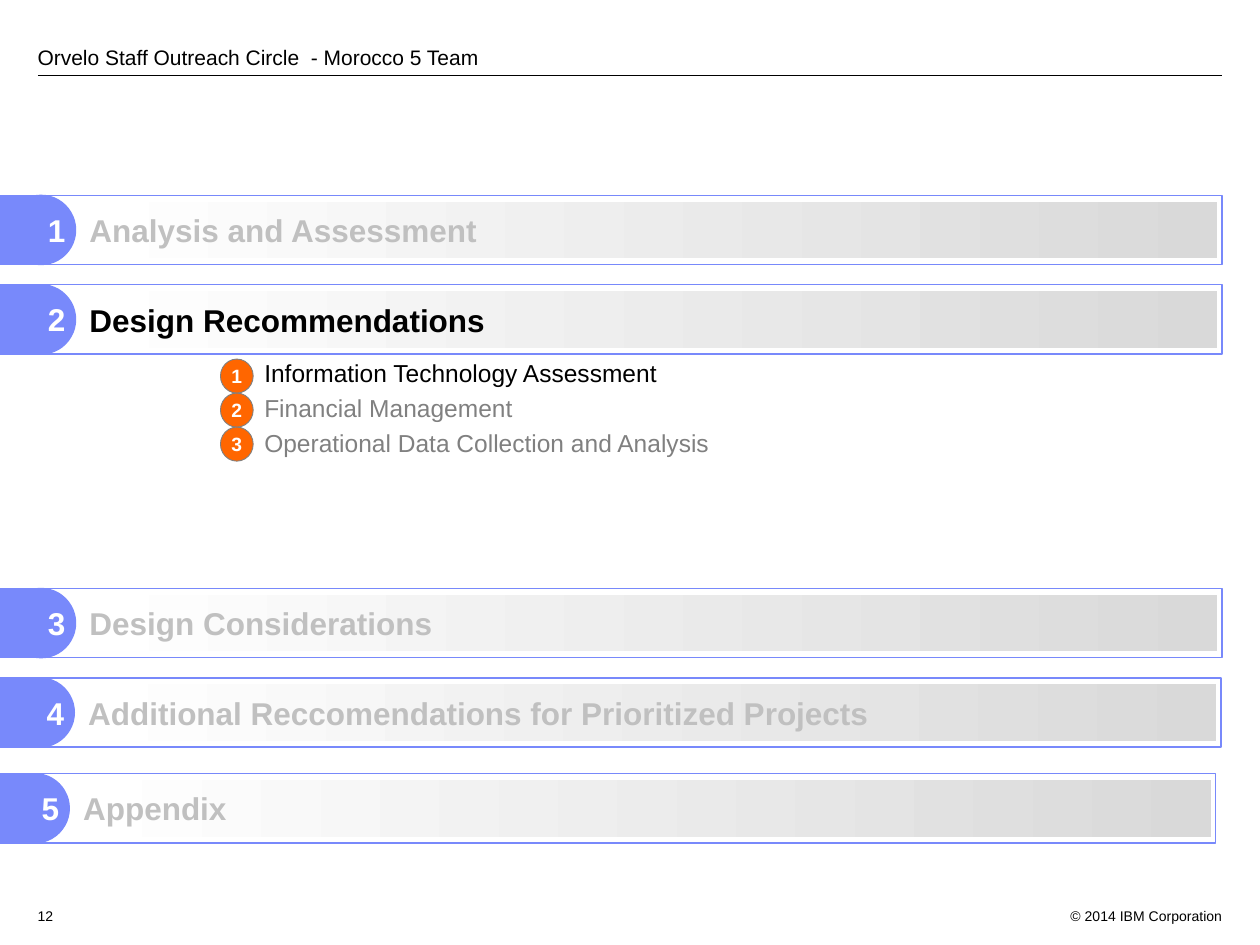
"""Build the agenda slide with its second section open."""
from lxml import etree
from pptx import Presentation
from pptx.dml.color import RGBColor
from pptx.enum.shapes import MSO_CONNECTOR, MSO_SHAPE
from pptx.enum.text import MSO_ANCHOR, PP_ALIGN
from pptx.oxml.ns import qn
from pptx.util import Pt

OVAL, RECTANGLE = MSO_SHAPE.OVAL, MSO_SHAPE.RECTANGLE
STRAIGHT = MSO_CONNECTOR.STRAIGHT
LEFT, CENTER, RIGHT = PP_ALIGN.LEFT, PP_ALIGN.CENTER, PP_ALIGN.RIGHT
TOP, MIDDLE, BOTTOM = MSO_ANCHOR.TOP, MSO_ANCHOR.MIDDLE, MSO_ANCHOR.BOTTOM

FONT = "Arial"
COLORS = {
    "black": "000000", "white": "FFFFFF", "blue": "7889FB", "orange": "FF6600",
    "gray": "808080", "faded": "C0C0C0", "bar_end": "D9D9D9",
}

HEADER = "Orvelo Staff Outreach Circle  - Morocco 5 Team"
COPYRIGHT = "© 2014 IBM Corporation"
PAGE_NUMBER = "12"
SECTIONS = [
    ("Analysis and Assessment", "faded", 0, 111.6),
    ("Design Recommendations", "black", 0, 162.72),
    ("Design Considerations", "faded", 0, 336.24),
    ("Additional Reccomendations for Prioritized Projects", "faded", -0.72, 387.36),
    ("Appendix", "faded", -3.6, 442.08),
]
TOPICS = [
    ("Information Technology Assessment", "black"),
    ("Financial Management", "gray"),
    ("Operational Data Collection and Analysis", "gray"),
]

BAND_WIDTH, BAND_HEIGHT = 698.4, 39.6
TAB_WIDTH = 21.6
BAR_LEFT, BAR_WIDTH, BAR_INSET = 51.12, 644.4, 3.6
BADGE_LEFT, BADGE_TOP, BADGE_WIDTH, BADGE_HEIGHT = 126, 205.2, 18.72, 19.44


def color(name):
    return RGBColor.from_string(COLORS[name])


def write(shape, lines, size, bold=False, align=LEFT, anchor=MIDDLE,
          insets=(0, 0, 0, 0), gap=0, wrap=True):
    frame = shape.text_frame
    frame.word_wrap = wrap
    frame.vertical_anchor = anchor
    (frame.margin_left, frame.margin_top,
     frame.margin_right, frame.margin_bottom) = map(Pt, insets)
    for index, (text, tint) in enumerate(lines):
        para = frame.add_paragraph() if index else frame.paragraphs[0]
        para.alignment = align
        if index:
            para.space_before = Pt(gap)
        span = para.add_run()
        span.text = text
        span.font.name, span.font.size, span.font.bold = FONT, Pt(size), bold
        span.font.color.rgb = color(tint)


def add_text(page, place, lines, size, **style):
    box = page.shapes.add_textbox(*map(Pt, place))
    write(box, lines, size, **style)


def add_figure(page, kind, place, fill=None, line=None, weight=0.75):
    shape = page.shapes.add_shape(kind, *map(Pt, place))
    shape.shadow.inherit = False
    if fill:
        shape.fill.solid()
        shape.fill.fore_color.rgb = color(fill)
    else:
        shape.fill.background()
    if line:
        shape.line.color.rgb = color(line)
        shape.line.width = Pt(weight)
    else:
        shape.line.fill.background()
    return shape


def add_section(page, number, title, tint, left, top):
    knob = add_figure(page, OVAL, (left + 3.6, top, BAND_HEIGHT, BAND_HEIGHT),
                      "blue", "blue")
    write(knob, [(str(number), "white")], 18, bold=True, align=RIGHT)
    add_figure(page, RECTANGLE, (left, top, BAND_WIDTH, BAND_HEIGHT), line="blue")
    add_figure(page, RECTANGLE, (left, top, TAB_WIDTH, BAND_HEIGHT), "blue")
    bar = add_figure(page, RECTANGLE, (left + BAR_LEFT, top + BAR_INSET,
                                       BAR_WIDTH, BAND_HEIGHT - 2 * BAR_INSET))
    bar.fill.gradient()
    bar.fill.gradient_angle = 0
    for stop, shade in zip(bar.fill.gradient_stops, ("white", "bar_end")):
        stop.color.rgb = color(shade)
    write(bar, [(title, tint)], 18, bold=True, insets=(0, 3.6, 7.2, 3.6))


def add_topics(page):
    add_text(page, (151, 204.4, 547, 60), TOPICS, 14, anchor=TOP, gap=3.3)
    for index in range(len(TOPICS)):
        badge = add_figure(page, OVAL, (BADGE_LEFT, BADGE_TOP + index * BADGE_HEIGHT,
                                        BADGE_WIDTH, BADGE_HEIGHT),
                           "orange", "gray", 0.5)
        write(badge, [(str(index + 1), "white")], 11, bold=True, align=CENTER,
              wrap=False)


def add_frame(page):
    rule = page.shapes.add_connector(STRAIGHT, Pt(21.6), Pt(43.2), Pt(698.4), Pt(43.2))
    rule.line.color.rgb = color("black")
    rule.line.width = Pt(0.75)
    etree.SubElement(rule.element.spPr, qn("a:effectLst"))
    add_text(page, (14.4, 10.8, 621.36, 28.8), [(HEADER, "black")], 12,
             anchor=BOTTOM, insets=(7.2, 0, 7.2, 0))
    small = {"anchor": TOP, "insets": (7.2, 3.6, 7.2, 3.6)}
    add_text(page, (597.6, 514.8, 108, 14.4), [(COPYRIGHT, "black")], 8,
             align=RIGHT, **small)
    add_text(page, (14.4, 514.8, 28.8, 14.4), [(PAGE_NUMBER, "black")], 8, **small)


def main():
    deck = Presentation()
    deck.slide_width, deck.slide_height = Pt(720), Pt(540)
    page = deck.slides.add_slide(deck.slide_layouts[6])
    add_frame(page)
    for number, section in enumerate(SECTIONS, 1):
        add_section(page, number, *section)
    add_topics(page)
    deck.save("out.pptx")


if __name__ == "__main__":
    main()
